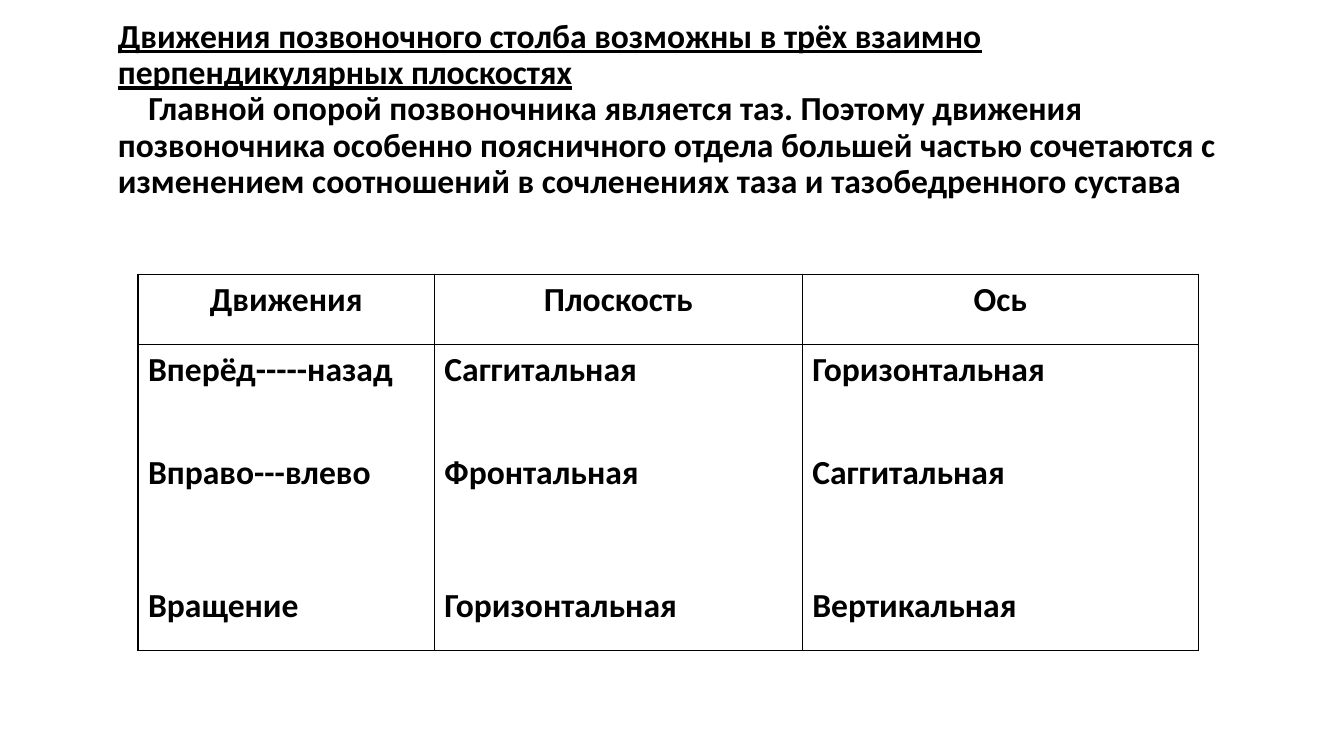
from lxml import etree
from pptx import Presentation
from pptx.dml.color import RGBColor
from pptx.enum.text import MSO_ANCHOR, MSO_AUTO_SIZE, PP_ALIGN
from pptx.oxml.ns import qn
from pptx.util import Pt

LEFT, CENTER = PP_ALIGN.LEFT, PP_ALIGN.CENTER
MIDDLE = MSO_ANCHOR.MIDDLE
NO_AUTOFIT = MSO_AUTO_SIZE.NONE
TITLE_ONLY = 5
FONT_NAME = "Calibri"
BLACK = "000000"

HEADING = "Движения позвоночного столба возможны в трёх взаимно перпендикулярных плоскостях"
EXPLANATION = (
    "Главной опорой позвоночника является таз. Поэтому движения позвоночника "
    "особенно поясничного отдела большей частью сочетаются с изменением "
    "соотношений в сочленениях таза и тазобедренного сустава"
)
COLUMNS = [
    ("Движения", 211.7, ["Вперёд-----назад", "Вправо---влево", "Вращение"]),
    ("Плоскость", 262.8, ["Саггитальная", "Фронтальная", "Горизонтальная"]),
    ("Ось", 283, ["Горизонтальная", "Саггитальная", "Вертикальная"]),
]
ROW_HEIGHTS = [50.4, 218.2]
ENTRY_GAPS = [0, 44, 66]


def color(hex_value):
    """Return the colour for a hex string."""
    return RGBColor.from_string(hex_value)


def write_paragraphs(text_frame, texts, alignment, gaps):
    """Fill a text frame with bold paragraphs separated by the given gaps."""
    text_frame.text = "\n".join(texts)
    for paragraph, gap in zip(text_frame.paragraphs, gaps):
        paragraph.alignment = alignment
        paragraph.space_before = Pt(gap)
        for run in paragraph.runs:
            run.font.name = FONT_NAME
            run.font.size = Pt(24)
            run.font.bold = True
            run.font.color.rgb = color(BLACK)


def add_borders(cell):
    """Draw a one-point line on every side of a cell."""
    properties = cell._tc.get_or_add_tcPr()
    for side in ("a:lnL", "a:lnR", "a:lnT", "a:lnB"):
        line = etree.SubElement(properties, qn(side), w=str(Pt(1)))
        fill = etree.SubElement(line, qn("a:solidFill"))
        etree.SubElement(fill, qn("a:srgbClr"), val=BLACK)


def build_title(slide, left, top, width, height):
    """Place the underlined heading and its explanation in the title."""
    title = slide.shapes.title
    title.left, title.top = Pt(left), Pt(top)
    title.width, title.height = Pt(width), Pt(height)
    text_frame = title.text_frame
    text_frame.word_wrap = True
    text_frame.auto_size = NO_AUTOFIT
    text_frame.vertical_anchor = MIDDLE
    write_paragraphs(text_frame, [HEADING, EXPLANATION], LEFT, [0, 0])
    for paragraph in text_frame.paragraphs:
        paragraph.line_spacing = 0.9
    heading, explanation = text_frame.paragraphs
    heading.runs[0].font.underline = True
    explanation._p.get_or_add_pPr().set("indent", str(Pt(21.7)))


def build_movement_table(slide, left, top, width, height):
    """Place the table of movements, planes and axes."""
    frame = slide.shapes.add_table(
        len(ROW_HEIGHTS), len(COLUMNS), Pt(left), Pt(top), Pt(width), Pt(height)
    )
    table = frame.table
    table.first_row = False
    table.horz_banding = False
    for row, row_height in zip(table.rows, ROW_HEIGHTS):
        row.height = Pt(row_height)
    for index, (header, column_width, entries) in enumerate(COLUMNS):
        table.columns[index].width = Pt(column_width)
        write_paragraphs(table.cell(0, index).text_frame, [header], CENTER, [0])
        write_paragraphs(table.cell(1, index).text_frame, entries, LEFT, ENTRY_GAPS)
    for cell in table.iter_cells():
        add_borders(cell)
        cell.fill.background()


def main():
    """Build the slide and save the presentation."""
    presentation = Presentation()
    presentation.slide_width, presentation.slide_height = Pt(960), Pt(540)
    slide = presentation.slides.add_slide(presentation.slide_layouts[TITLE_ONLY])
    build_title(slide, 77, 0, 828, 157)
    table_width = sum(column_width for _, column_width, _ in COLUMNS)
    build_movement_table(slide, 98.6, 195.8, table_width, sum(ROW_HEIGHTS))
    presentation.save("out.pptx")


if __name__ == "__main__":
    main()
